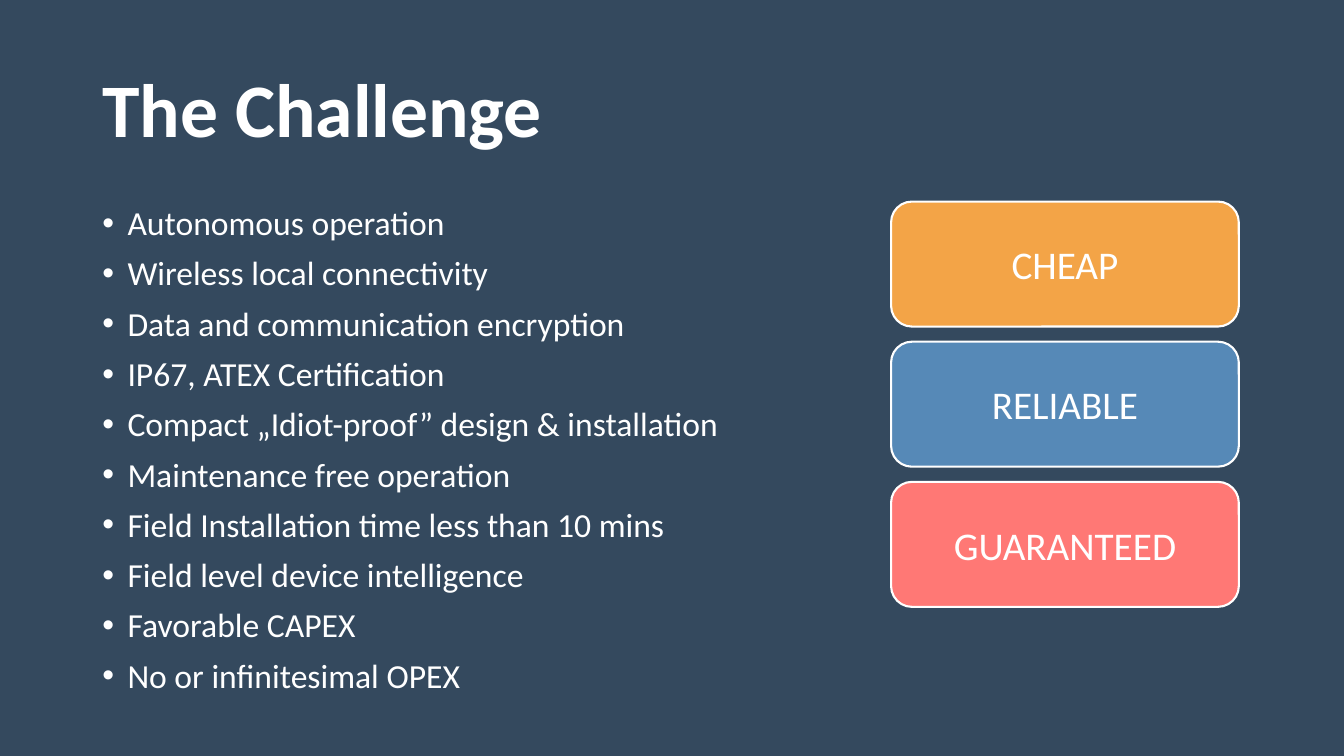
from lxml import etree
from pptx import Presentation
from pptx.dml.color import RGBColor
from pptx.enum.shapes import MSO_SHAPE
from pptx.enum.text import MSO_ANCHOR, PP_ALIGN
from pptx.oxml.ns import qn
from pptx.util import Pt

ROUNDED = MSO_SHAPE.ROUNDED_RECTANGLE
TOP, MIDDLE = MSO_ANCHOR.TOP, MSO_ANCHOR.MIDDLE
LEFT, CENTER = PP_ALIGN.LEFT, PP_ALIGN.CENTER

COLORS = {
    "background": "34495E",
    "white": "FFFFFF",
    "orange": "F3A447",
    "blue": "5689B7",
    "coral": "FF7875",
}
CHALLENGES = [
    "Autonomous operation",
    "Wireless local connectivity",
    "Data and communication encryption",
    "IP67, ATEX Certification",
    "Compact „Idiot-proof” design & installation",
    "Maintenance free operation",
    "Field Installation time less than 10 mins",
    "Field level device intelligence",
    "Favorable CAPEX",
    "No or infinitesimal OPEX",
]
QUALITIES = [("CHEAP", "orange"), ("RELIABLE", "blue"), ("GUARANTEED", "coral")]


def rgb(name):
    return RGBColor.from_string(COLORS[name])


def add_bullet(paragraph, indent=18):
    properties = paragraph._p.get_or_add_pPr()
    properties.set("marL", str(Pt(indent)))
    properties.set("indent", str(-Pt(indent)))
    etree.SubElement(properties, qn("a:buFont")).set("typeface", "Arial")
    etree.SubElement(properties, qn("a:buChar")).set("char", "•")


def write(shape, lines, size, bold=False, align=LEFT, anchor=TOP,
          spacing=1.0, gap=0, bullets=False):
    """Fill a shape with one formatted paragraph per line."""
    frame = shape.text_frame
    frame.word_wrap = True
    frame.vertical_anchor = anchor
    for i, line in enumerate(lines):
        paragraph = frame.add_paragraph() if i else frame.paragraphs[0]
        if bullets:
            add_bullet(paragraph)
        paragraph.text = line
        paragraph.alignment = align
        paragraph.line_spacing = spacing
        if i and gap:
            paragraph.space_before = Pt(gap)
        font = paragraph.font
        font.name = "Calibri"
        font.size = Pt(size)
        font.bold = bold
        font.color.rgb = rgb("white")


def add_title(slide, left, top, width, height):
    title = slide.shapes.add_textbox(Pt(left), Pt(top), Pt(width), Pt(height))
    write(title, ["The Challenge"], 54, bold=True, anchor=MIDDLE, spacing=0.9)


def add_challenges(slide, left, top, width, height):
    challenges = slide.shapes.add_textbox(Pt(left), Pt(top), Pt(width), Pt(height))
    write(challenges, CHALLENGES, 24, spacing=0.9, gap=10, bullets=True)


def add_qualities(slide, left, top, width, height, gap=10.8):
    """Stack equal cards to fill the given box."""
    card_height = (height - gap * (len(QUALITIES) - 1)) / len(QUALITIES)
    for i, (quality, color) in enumerate(QUALITIES):
        card_top = top + i * (card_height + gap)
        card = slide.shapes.add_shape(
            ROUNDED, Pt(left), Pt(card_top), Pt(width), Pt(card_height))
        card.shadow.inherit = False
        card.fill.solid()
        card.fill.fore_color.rgb = rgb(color)
        card.line.color.rgb = rgb("white")
        card.line.width = Pt(1.5)
        write(card, [quality], 28, align=CENTER, anchor=MIDDLE)


def main():
    presentation = Presentation()
    presentation.slide_width = Pt(960)
    presentation.slide_height = Pt(540)
    slide = presentation.slides.add_slide(presentation.slide_layouts[6])
    slide.background.fill.solid()
    slide.background.fill.fore_color.rgb = rgb("background")
    add_title(slide, 66, 28.8, 828, 104.4)
    add_challenges(slide, 66, 144, 468.7, 370.8)
    add_qualities(slide, 636.5, 144, 248.4, 289.5)
    presentation.save("out.pptx")


if __name__ == "__main__":
    main()
